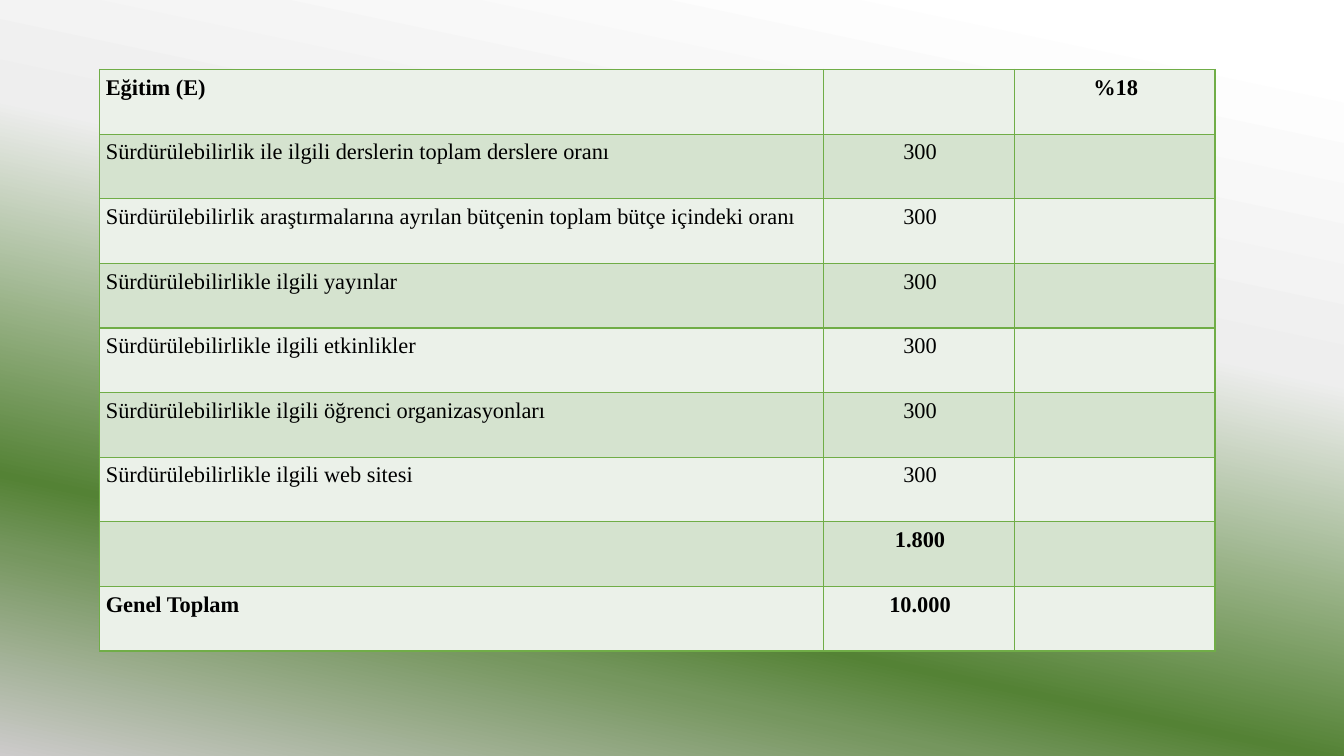
from lxml.etree import SubElement
from pptx import Presentation
from pptx.dml.color import RGBColor
from pptx.enum.text import PP_ALIGN
from pptx.oxml import parse_xml
from pptx.oxml.ns import nsdecls, qn
from pptx.util import Inches, Pt

# Content: criterion, points, weight, bold
CRITERIA = [
    ("Eğitim (E)", "", "%18", True),
    ("Sürdürülebilirlik ile ilgili derslerin toplam derslere oranı", "300", "", False),
    ("Sürdürülebilirlik araştırmalarına ayrılan bütçenin toplam bütçe içindeki oranı", "300", "", False),
    ("Sürdürülebilirlikle ilgili yayınlar", "300", "", False),
    ("Sürdürülebilirlikle ilgili etkinlikler", "300", "", False),
    ("Sürdürülebilirlikle ilgili öğrenci organizasyonları", "300", "", False),
    ("Sürdürülebilirlikle ilgili web sitesi", "300", "", False),
    ("", "1.800", "", True),
    ("Genel Toplam", "10.000", "", True),
]
COLUMN_WIDTHS = [7.18, 1.89, 1.99]
LEFT, TOP, HEIGHT = 0.99, 0.69, 5.77
COLORS = {"text": "000000", "border": "70AD47", "light": "EBF1E9", "dark": "D5E3CF"}
BACKGROUND_STOPS = [(6, "FFFFFF"), (37, "EEEEEE"), (73, "548235"), (80, "75965E"), (100, "CDCBCB")]
BACKGROUND_ANGLE = 102  # clockwise


def write(cell, text, *, bold=False, align=PP_ALIGN.LEFT, indent=0.06, size=16):
    cell.margin_left, cell.margin_top = 0, Inches(0.04)
    cell.margin_right, cell.margin_bottom = Inches(0.06), 0
    paragraph = cell.text_frame.paragraphs[0]
    paragraph.alignment = align
    paragraph.line_spacing = 1.07
    paragraph._p.get_or_add_pPr().set("marL", str(Inches(indent)))
    paragraph.font.size = Pt(size)
    if text:
        run = paragraph.add_run()
        run.text = text
        run.font.name, run.font.size, run.font.bold = "Times New Roman", Pt(size), bold
        run.font.color.rgb = RGBColor.from_string(COLORS["text"])


def paint(cell, fill):
    cell.fill.solid()
    cell.fill.fore_color.rgb = RGBColor.from_string(fill)
    # Borders come before the fill in the cell properties
    for position, side in enumerate(("lnL", "lnR", "lnT", "lnB")):
        cell._tc.get_or_add_tcPr().insert(position, parse_xml(
            f'<a:{side} {nsdecls("a")} w="{Pt(1)}"><a:solidFill>'
            f'<a:srgbClr val="{COLORS["border"]}"/></a:solidFill></a:{side}>'))


def paint_background(slide):
    fill = slide.background.fill
    fill.gradient()
    fill.gradient_angle = 360 - BACKGROUND_ANGLE
    stops = slide.element.find(".//" + qn("a:gsLst"))
    for stop in list(stops):
        stops.remove(stop)
    for percent, color in BACKGROUND_STOPS:
        stop = SubElement(stops, qn("a:gs"), pos=str(percent * 1000))
        SubElement(stop, qn("a:srgbClr"), val=color)


def main():
    deck = Presentation()
    deck.slide_width, deck.slide_height = Inches(13.33), Inches(7.5)
    slide = deck.slides.add_slide(deck.slide_layouts[6])
    paint_background(slide)

    # Scoring table
    scores = slide.shapes.add_table(
        len(CRITERIA), len(COLUMN_WIDTHS), Inches(LEFT), Inches(TOP),
        Inches(sum(COLUMN_WIDTHS)), Inches(HEIGHT)).table
    scores.first_row = scores.horz_banding = False
    for column, width in zip(scores.columns, COLUMN_WIDTHS):
        column.width = Inches(width)

    for r, (*texts, bold) in enumerate(CRITERIA):
        band = COLORS["dark" if r % 2 else "light"]
        for c, text in enumerate(texts):
            cell = scores.cell(r, c)
            if c == 0:
                write(cell, text, bold=bold)
            else:
                write(cell, text, bold=bold, align=PP_ALIGN.CENTER, indent=0.08)
            paint(cell, band)

    deck.save("out.pptx")


if __name__ == "__main__":
    main()
